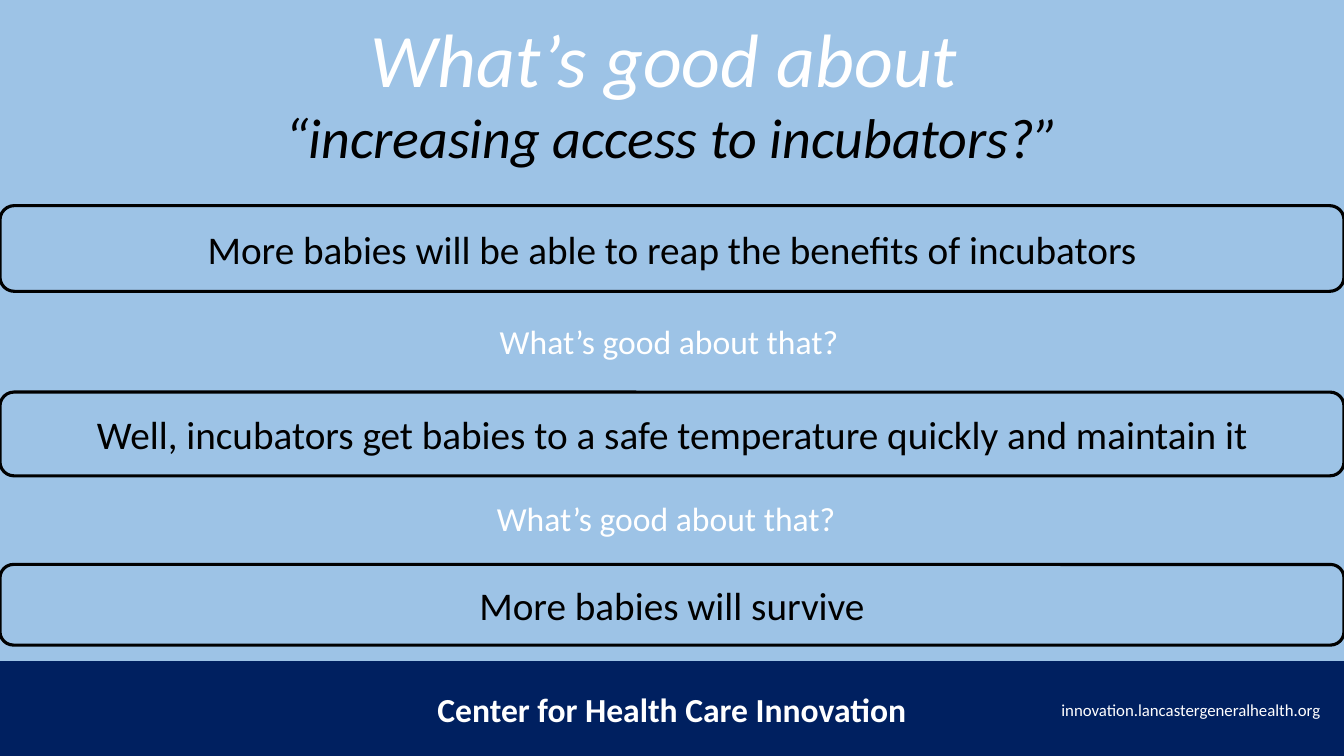
import pptx
import pptx.util
import pptx.dml.color
import pptx.enum.shapes
import pptx.enum.text

Pt = pptx.util.Pt
Align = pptx.enum.text.PP_ALIGN
Anchor = pptx.enum.text.MSO_ANCHOR
Preset = pptx.enum.shapes.MSO_SHAPE

SKY, NAVY, WHITE, BLACK = "9DC3E6", "002060", "FFFFFF", "000000"
WIDTH, HEIGHT = 960, 540
FOOTER_TOP = 472.3


def set_color(color_format, color):
    """Give a fill's or a font's colour the hex value."""
    color_format.rgb = pptx.dml.color.RGBColor.from_string(color)


def set_fill(fill, color):
    """Make a fill solid in the hex colour."""
    fill.solid()
    set_color(fill.fore_color, color)


def write(paragraph, text, size, color, align, bold=False, italic=False):
    """Put formatted text in a paragraph."""
    paragraph.text = text
    paragraph.alignment = align
    font = paragraph.font
    font.name, font.size, font.bold, font.italic = "Calibri", Pt(size), bold, italic
    set_color(font.color, color)


def place(shape, left, top, width, height):
    """Move and size a shape, in points."""
    shape.left, shape.top = Pt(left), Pt(top)
    shape.width, shape.height = Pt(width), Pt(height)


def add_title(slide, lines):
    """Fill the title placeholder with lines of text, size and colour."""
    title = slide.shapes.title
    place(title, 112.3, 5, 735.8, 121)
    frame = title.text_frame
    frame.auto_size = pptx.enum.text.MSO_AUTO_SIZE.NONE
    frame.vertical_anchor = Anchor.TOP
    for index, (text, size, color) in enumerate(lines):
        paragraph = frame.add_paragraph() if index else frame.paragraphs[0]
        write(paragraph, text, size, color, Align.CENTER, italic=True)


def add_label(slide, text, box, size, align, bold=False):
    """Add a white one-line text box."""
    label = slide.shapes.add_textbox(*map(Pt, box))
    label.text_frame.word_wrap = True
    write(label.text_frame.paragraphs[0], text, size, WHITE, align, bold)


def add_answer(slide, text, top, height):
    """Add a full-width rounded outline with centred text."""
    answer = slide.shapes.add_shape(
        Preset.ROUNDED_RECTANGLE, 0, Pt(top), Pt(WIDTH), Pt(height))
    answer.shadow.inherit = False
    answer.fill.background()
    set_fill(answer.line.fill, BLACK)
    answer.line.width = Pt(2.25)
    answer.text_frame.word_wrap = True
    answer.text_frame.vertical_anchor = Anchor.MIDDLE
    write(answer.text_frame.paragraphs[0], text, 28, BLACK, Align.CENTER)


def add_footer(slide):
    """Add the navy band with the centre's name and web address."""
    band = slide.shapes.add_shape(
        Preset.RECTANGLE, 0, Pt(FOOTER_TOP), Pt(WIDTH), Pt(HEIGHT - FOOTER_TOP))
    band.shadow.inherit = False
    set_fill(band.fill, NAVY)
    band.line.fill.background()
    add_label(slide, "Center for Health Care Innovation",
              (298.8, 488.9, 362.2, 36), 24, Align.CENTER, bold=True)
    add_label(slide, "innovation.lancastergeneralhealth.org",
              (686.2, 496.1, 264.2, 21.6), 12, Align.RIGHT)


def main():
    """Build and save the slide."""
    presentation = pptx.Presentation()
    presentation.slide_width, presentation.slide_height = Pt(WIDTH), Pt(HEIGHT)
    slide = presentation.slides.add_slide(
        presentation.slide_layouts.get_by_name("Title Only"))
    set_fill(slide.background.fill, SKY)
    add_footer(slide)
    add_title(slide, [
        ("What’s good about ", 54, WHITE),
        ("“increasing access to incubators?”", 40, BLACK),
    ])
    for text, top, height in [
        ("More babies will be able to reap the benefits of incubators", 146.9, 61.2),
        ("Well, incubators get babies to a safe temperature quickly and maintain it",
         280.1, 59.8),
        ("More babies will survive", 403.2, 57.6),
    ]:
        add_answer(slide, text, top, height)
    for left, top in [(349.9, 225.4), (347.8, 352.1)]:
        add_label(slide, "What’s good about that?",
                  (left, top, 263.5, 36), 24, Align.LEFT)
    presentation.save("out.pptx")


if __name__ == "__main__":
    main()
